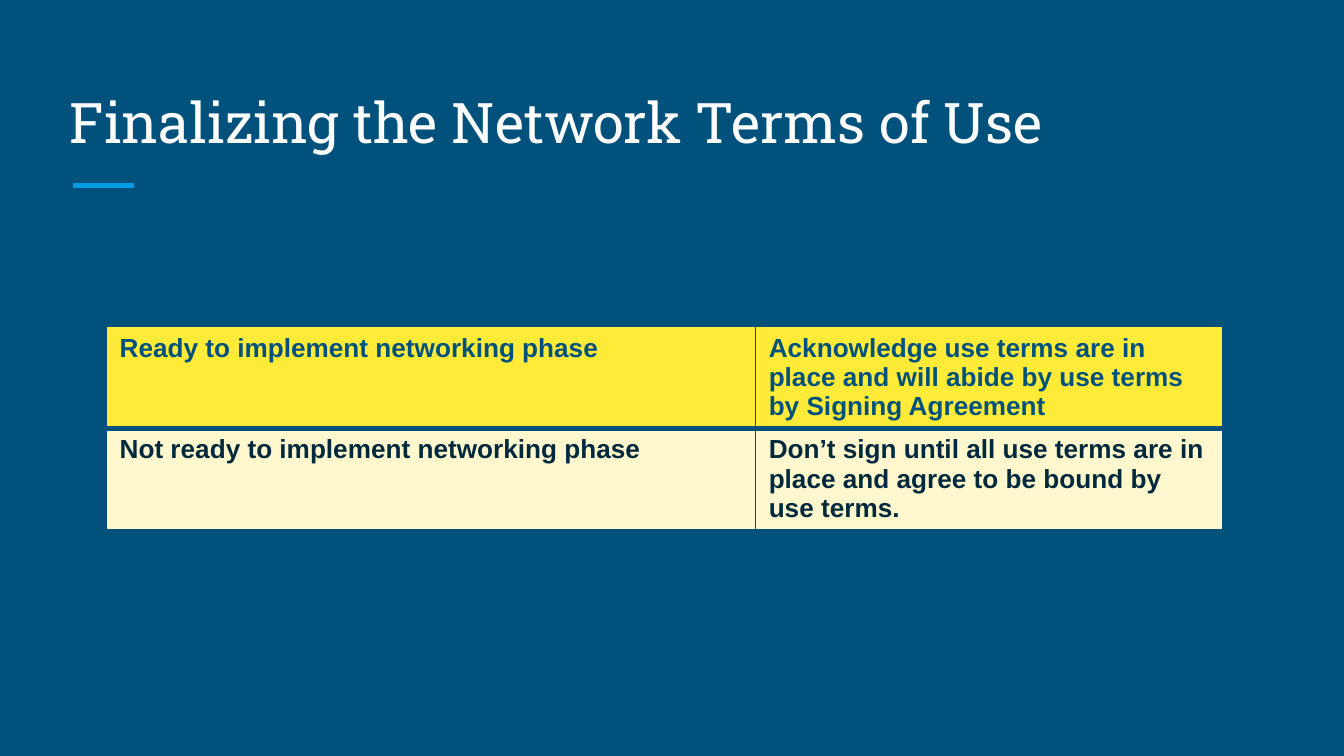
from lxml import etree
from pptx import Presentation
from pptx.dml.color import RGBColor
from pptx.enum import shapes, text
from pptx.oxml import ns
from pptx.util import Inches, Pt

NAVY = RGBColor(0x00, 0x51, 0x7C)
DARK = RGBColor(0x00, 0x29, 0x3E)
BLUE = RGBColor(0x03, 0x9B, 0xE5)
WHITE = RGBColor(0xFF, 0xFF, 0xFF)
YELLOW = RGBColor(0xFF, 0xEB, 0x38)
CREAM = RGBColor(0xFF, 0xF7, 0xCE)

SLIDE_WIDTH = 10
SLIDE_HEIGHT = SLIDE_WIDTH * 9 / 16

ROWS = [
    (0.74, YELLOW, NAVY, 3, (
        "Ready to implement networking phase",
        "Acknowledge use terms are in place and will abide by use terms by Signing Agreement",
    )),
    (0.7, CREAM, DARK, 1, (
        "Not ready to implement networking phase",
        "Don’t sign until all use terms are in place and agree to be bound by use terms.",
    )),
]


def write_text(frame, content, font, size, color, bold=False):
    paragraph = frame.paragraphs[0]
    paragraph.alignment = text.PP_ALIGN.LEFT
    run = paragraph.add_run()
    run.text = content
    run.font.name = font
    run.font.size = Pt(size)
    run.font.color.rgb = color
    run.font.bold = bold


def add_border(cell, side, color, width):
    properties = cell._tc.get_or_add_tcPr()
    line = etree.SubElement(properties, ns.qn(f"a:ln{side}"), w=str(Pt(width)))
    fill = etree.SubElement(line, ns.qn("a:solidFill"))
    etree.SubElement(fill, ns.qn("a:srgbClr"), val=str(color))


def add_heading(slide, left, top, width, height):
    title = slide.shapes.title
    title.left, title.top = Inches(left), Inches(top)
    title.width, title.height = Inches(width), Inches(height)
    frame = title.text_frame
    frame.word_wrap = True
    frame.auto_size = text.MSO_AUTO_SIZE.NONE
    frame.vertical_anchor = text.MSO_ANCHOR.BOTTOM
    frame.margin_left = frame.margin_right = Inches(0.1)
    frame.margin_top = frame.margin_bottom = Inches(0.1)
    write_text(frame, "Finalizing the Network Terms of Use",
               font="Roboto Slab", size=30, color=WHITE)

    rule_left, rule_top = Inches(left + 0.12), Inches(top + height + 0.13)
    rule = slide.shapes.add_connector(
        shapes.MSO_CONNECTOR.STRAIGHT,
        rule_left, rule_top, rule_left + Inches(0.46), rule_top)
    rule.line.color.rgb = BLUE
    rule.line.width = Pt(3)
    etree.SubElement(rule._element.spPr, ns.qn("a:effectLst"))


def add_terms_table(slide, left, top, column_widths):
    height = sum(row[0] for row in ROWS)
    table = slide.shapes.add_table(
        len(ROWS), len(column_widths), Inches(left), Inches(top),
        Inches(sum(column_widths)), Inches(height)).table
    table.first_row = table.horz_banding = False
    for column, width in zip(table.columns, column_widths):
        column.width = Inches(width)
    for row, (row_height, fill, color, bottom, contents) in zip(table.rows, ROWS):
        row.height = Inches(row_height)
        for cell, content in zip(row.cells, contents):
            for side in "LRTB":
                add_border(cell, side, NAVY, bottom if side == "B" else 1)
            cell.fill.solid()
            cell.fill.fore_color.rgb = fill
            write_text(cell.text_frame, content,
                       font="Arial", size=14, color=color, bold=True)


def main():
    presentation = Presentation()
    presentation.slide_width = Inches(SLIDE_WIDTH)
    presentation.slide_height = Inches(SLIDE_HEIGHT)
    slide = presentation.slides.add_slide(presentation.slide_layouts[5])
    slide.background.fill.solid()
    slide.background.fill.fore_color.rgb = NAVY
    add_heading(slide, 0.42, 0.5, 9.15, 0.75)
    add_terms_table(slide, 0.79, 2.43, (4.83, 3.48))
    presentation.save("out.pptx")


if __name__ == "__main__":
    main()
